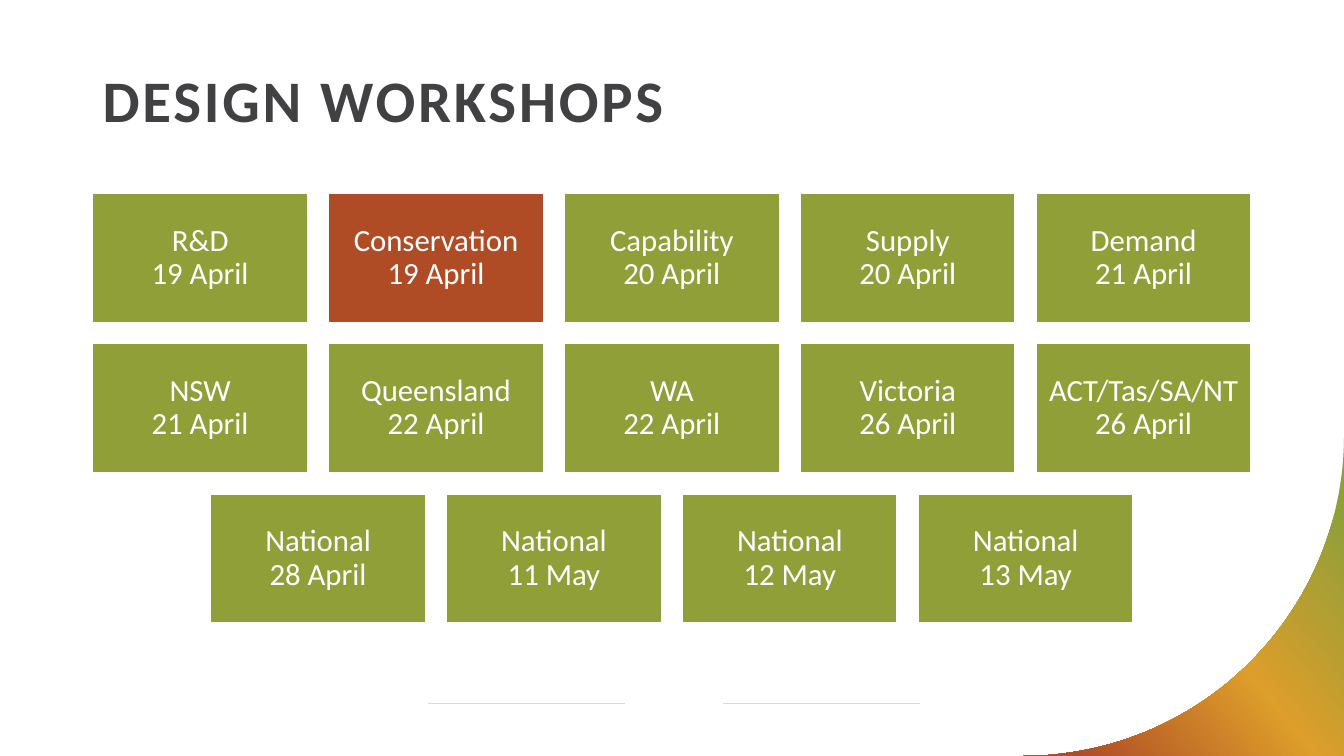
from copy import deepcopy
from math import cos, pi, sin

from pptx import Presentation
from pptx.dml.color import RGBColor
from pptx.enum.shapes import MSO_CONNECTOR, MSO_SHAPE
from pptx.enum.text import MSO_ANCHOR, PP_ALIGN
from pptx.oxml.ns import qn
from pptx.util import Inches, Pt

COLORS = {
    "green": "919F39",
    "amber": "DD9E2A",
    "rust": "AF4C26",
    "ink": "414042",
    "rule": "D9D8DA",
    "white": "FFFFFF",
}
WORKSHOPS = [
    [("R&D", "19 April"), ("Conservation", "19 April"), ("Capability", "20 April"),
     ("Supply", "20 April"), ("Demand", "21 April")],
    [("NSW", "21 April"), ("Queensland", "22 April"), ("WA", "22 April"),
     ("Victoria", "26 April"), ("ACT/Tas/SA/NT", "26 April")],
    [("National", "28 April"), ("National", "11 May"), ("National", "12 May"),
     ("National", "13 May")],
]
HIGHLIGHT = "Conservation"
COLUMNS = 5


def color(name):
    return RGBColor.from_string(COLORS[name])


def write(frame, text, size, ink, bold=False, align=PP_ALIGN.LEFT,
          anchor=MSO_ANCHOR.TOP, spacing=0, font="Calibri"):
    frame.word_wrap = True
    frame.vertical_anchor = anchor
    para = frame.paragraphs[0]
    para.alignment = align
    para.line_spacing = 0.9
    for index, line in enumerate(text.split("\n")):
        if index:
            para.add_line_break()
        span = para.add_run()
        span.text = line
        span.font.name = font
        span.font.size = Pt(size)
        span.font.bold = bold
        span.font.color.rgb = color(ink)
        if spacing:
            span._r.get_or_add_rPr().set("spc", str(spacing * 100))


class WorkshopPage:
    left, top = 6.9, 25.6
    column_step, row_step = 17.55, 19.87
    card_width, card_height = 15.98, 17.07

    def __init__(self, deck):
        self.deck = deck
        self.page = deck.slides.add_slide(deck.slide_layouts[6])

    def across(self, percent):
        return round(self.deck.slide_width * percent / 100)

    def down(self, percent):
        return round(self.deck.slide_height * percent / 100)

    def area(self, left, top, width, height):
        return self.across(left), self.down(top), self.across(width), self.down(height)

    def rule(self, start, end, height):
        line = self.page.shapes.add_connector(
            MSO_CONNECTOR.STRAIGHT, self.across(start), self.down(height),
            self.across(end), self.down(height))
        line.line.color.rgb = color("rule")
        line.line.width = Pt(0.5)
        properties = line._element.spPr
        properties.append(properties.makeelement(qn("a:effectLst"), {}))

    def corner(self, center_x, center_y, steps=60):
        radius_x, radius_y = 100 - center_x, 100 - center_y
        angles = [pi / 2 * step / steps for step in range(steps + 1)]
        arc = [(self.across(center_x + radius_x * cos(angle)),
                self.down(center_y + radius_y * sin(angle))) for angle in angles]
        builder = self.page.shapes.build_freeform(*arc[0])
        builder.add_line_segments(arc[1:] + [(self.across(100), self.down(100))])
        swoosh = builder.convert_to_shape()
        swoosh.shadow.inherit = False
        swoosh.line.fill.background()
        swoosh.fill.gradient()
        swoosh.fill.gradient_angle = 220
        stops = swoosh._element.spPr.find(".//" + qn("a:gsLst"))
        stops.append(deepcopy(stops[0]))
        blend = [("green", 0.12), ("amber", 0.5), ("rust", 0.91)]
        for stop, (name, position) in zip(swoosh.fill.gradient_stops, blend):
            stop.color.rgb = color(name)
            stop.position = position

    def title(self, text):
        box = self.page.shapes.add_textbox(*self.area(self.left, 8.8, 86.27, 13.6))
        write(box.text_frame, text, size=42, ink="ink", bold=True, spacing=2)

    def card(self, column, row, text, fill):
        box = self.page.shapes.add_shape(MSO_SHAPE.RECTANGLE, *self.area(
            self.left + column * self.column_step, self.top + row * self.row_step,
            self.card_width, self.card_height))
        box.shadow.inherit = False
        box.fill.solid()
        box.fill.fore_color.rgb = color(fill)
        box.line.color.rgb = color("white")
        box.line.width = Pt(1)
        frame = box.text_frame
        frame.margin_left = frame.margin_right = Inches(0.09)
        frame.margin_top = frame.margin_bottom = Inches(0.09)
        write(frame, text, size=22, ink="white", align=PP_ALIGN.CENTER,
              anchor=MSO_ANCHOR.MIDDLE)


def main():
    deck = Presentation()
    deck.slide_width, deck.slide_height = Inches(13.33), Inches(7.5)
    page = WorkshopPage(deck)
    for start, end in [(31.88, 46.51), (53.79, 68.42)]:
        page.rule(start, end, 93.07)
    page.corner(76.14, 57.6)
    page.title("DESIGN WORKSHOPS")
    for row, workshops in enumerate(WORKSHOPS):
        indent = (COLUMNS - len(workshops)) / 2
        for column, (name, date) in enumerate(workshops):
            fill = "rust" if name == HIGHLIGHT else "green"
            page.card(indent + column, row, f"{name}\n{date}", fill)
    deck.save("out.pptx")


if __name__ == "__main__":
    main()
